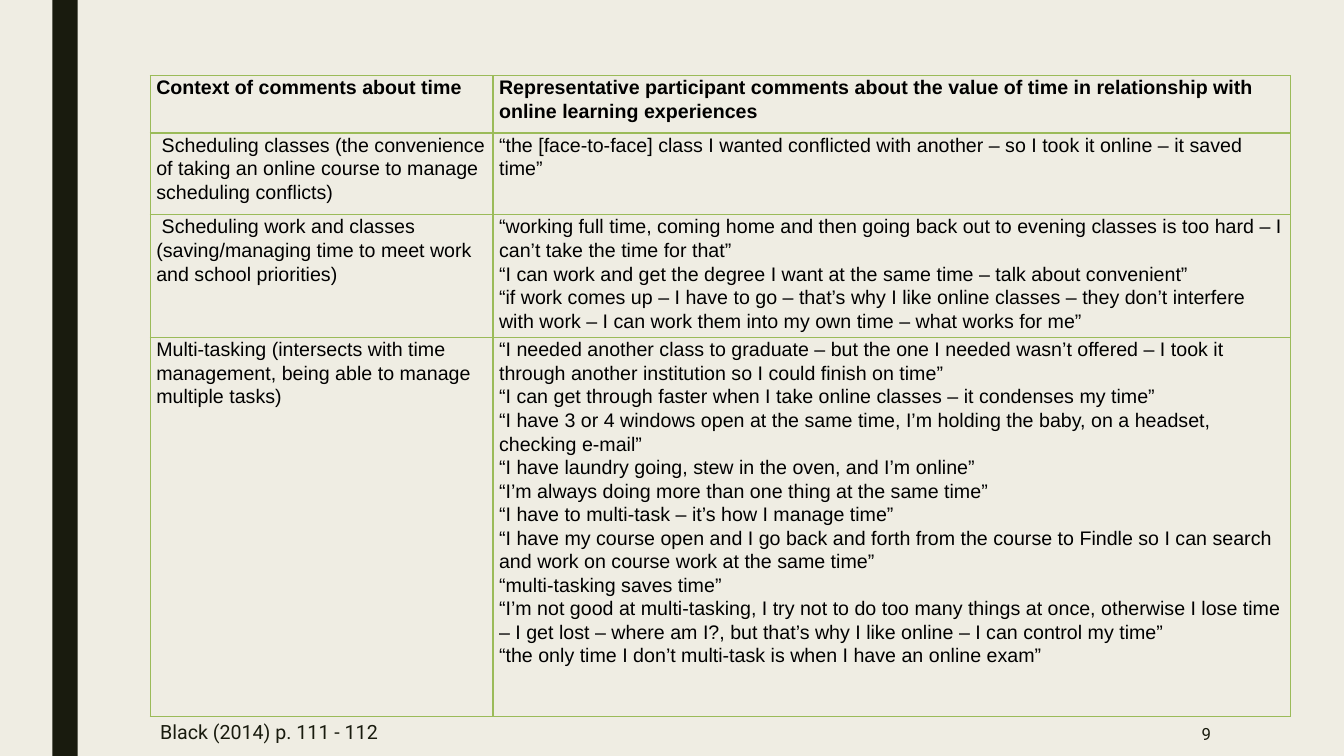
from lxml import etree
from pptx import Presentation
from pptx.dml.color import RGBColor
from pptx.enum.shapes import MSO_SHAPE
from pptx.enum.text import MSO_ANCHOR, PP_ALIGN
from pptx.oxml.ns import qn
from pptx.util import Inches, Pt

CREAM = RGBColor(0xEF, 0xED, 0xE3)
DARK = RGBColor(0x19, 0x1B, 0x0E)
GREEN = RGBColor(0x9B, 0xBB, 0x59)
BLACK = RGBColor(0, 0, 0)

COLUMN_WIDTHS = [3.4, 7.91]
ROW_HEIGHTS = [0.57, 0.81, 1.22, 3.76]

# Each row: context, then the participant comments
ROWS = [
    ("Context of comments about time", [
        "Representative participant comments about the value of time in relationship with online learning experiences",
    ]),
    (" Scheduling classes (the convenience of taking an online course to manage scheduling conflicts)", [
        "“the [face-to-face] class I wanted conflicted with another – so I took it online – it saved time”",
    ]),
    (" Scheduling work and classes (saving/managing time to meet work and school priorities)", [
        "“working full time, coming home and then going back out to evening classes is too hard – I can’t take the time for that”",
        "“I can work and get the degree I want at the same time – talk about convenient”",
        "“if work comes up – I have to go – that’s why I like online classes – they don’t interfere with work – I can work them into my own time – what works for me”",
    ]),
    ("Multi-tasking (intersects with time management, being able to manage multiple tasks)", [
        "“I needed another class to graduate – but the one I needed wasn’t offered – I took it through another institution so I could finish on time”",
        "“I can get through faster when I take online classes – it condenses my time”",
        "“I have 3 or 4 windows open at the same time, I’m holding the baby, on a headset, checking e-mail”",
        "“I have laundry going, stew in the oven, and I’m online”",
        "“I’m always doing more than one thing at the same time”",
        "“I have to multi-task – it’s how I manage time”",
        "“I have my course open and I go back and forth from the course to Findle so I can search and work on course work at the same time”",
        "“multi-tasking saves time”",
        "“I’m not good at multi-tasking, I try not to do too many things at once, otherwise I lose time – I get lost – where am I?, but that’s why I like online – I can control my time”",
        "“the only time I don’t multi-task is when I have an online exam”",
    ]),
]


def set_borders(cell, top, bottom):
    properties = cell._tc.get_or_add_tcPr()
    widths = [("a:lnL", 1), ("a:lnR", 1), ("a:lnT", top), ("a:lnB", bottom)]
    for position, (tag, width) in enumerate(widths):
        line = etree.Element(qn(tag), w=str(Pt(width)))
        fill = etree.SubElement(line, qn("a:solidFill"))
        etree.SubElement(fill, qn("a:srgbClr"), val=str(GREEN))
        properties.insert(position, line)


presentation = Presentation()
presentation.slide_width = Inches(13.33)
presentation.slide_height = Inches(7.5)
slide = presentation.slides.add_slide(presentation.slide_layouts[6])
slide.background.fill.solid()
slide.background.fill.fore_color.rgb = CREAM

# Dark side bar
side_bar = slide.shapes.add_shape(MSO_SHAPE.RECTANGLE, Inches(0.52), 0, Inches(0.25), Inches(7.5))
side_bar.shadow.inherit = False
side_bar.fill.solid()
side_bar.fill.fore_color.rgb = DARK
side_bar.line.fill.background()

# Comments table
table = slide.shapes.add_table(
    len(ROWS), len(COLUMN_WIDTHS), Inches(1.49), Inches(0.75),
    Inches(sum(COLUMN_WIDTHS)), Inches(sum(ROW_HEIGHTS))).table
table.horz_banding = False
for column, width in zip(table.columns, COLUMN_WIDTHS):
    column.width = Inches(width)

for row_index, (context, comments) in enumerate(ROWS):
    table.rows[row_index].height = Inches(ROW_HEIGHTS[row_index])
    for column_index, texts in enumerate([[context], comments]):
        cell = table.cell(row_index, column_index)
        cell.margin_left = cell.margin_right = Inches(0.06)
        cell.margin_top = cell.margin_bottom = 0
        cell.fill.background()
        set_borders(cell, top=2.25 if row_index == 1 else 1, bottom=2.25 if row_index == 0 else 1)
        cell.text = "\n".join(texts)
        for paragraph in cell.text_frame.paragraphs:
            paragraph.line_spacing = 1.07
            paragraph.font.name = "Arial"
            paragraph.font.size = Pt(14)
            paragraph.font.bold = row_index == 0
            paragraph.font.color.rgb = BLACK

# Citation and slide number
FOOTERS = [
    ("Black (2014) p. 111 - 112", 1.49, 7.04, 6.87, 14, PP_ALIGN.LEFT),
    ("9", 10.36, 7.06, 1.75, 12, PP_ALIGN.RIGHT),
]
for text, left, top, width, size, alignment in FOOTERS:
    footer = slide.shapes.add_textbox(Inches(left), Inches(top), Inches(width), Inches(0.44))
    footer.text_frame.word_wrap = True
    footer.text_frame.vertical_anchor = MSO_ANCHOR.MIDDLE
    paragraph = footer.text_frame.paragraphs[0]
    paragraph.text = text
    paragraph.alignment = alignment
    paragraph.font.name = "Roboto"
    paragraph.font.size = Pt(size)
    paragraph.font.color.rgb = DARK

presentation.save("out.pptx")
